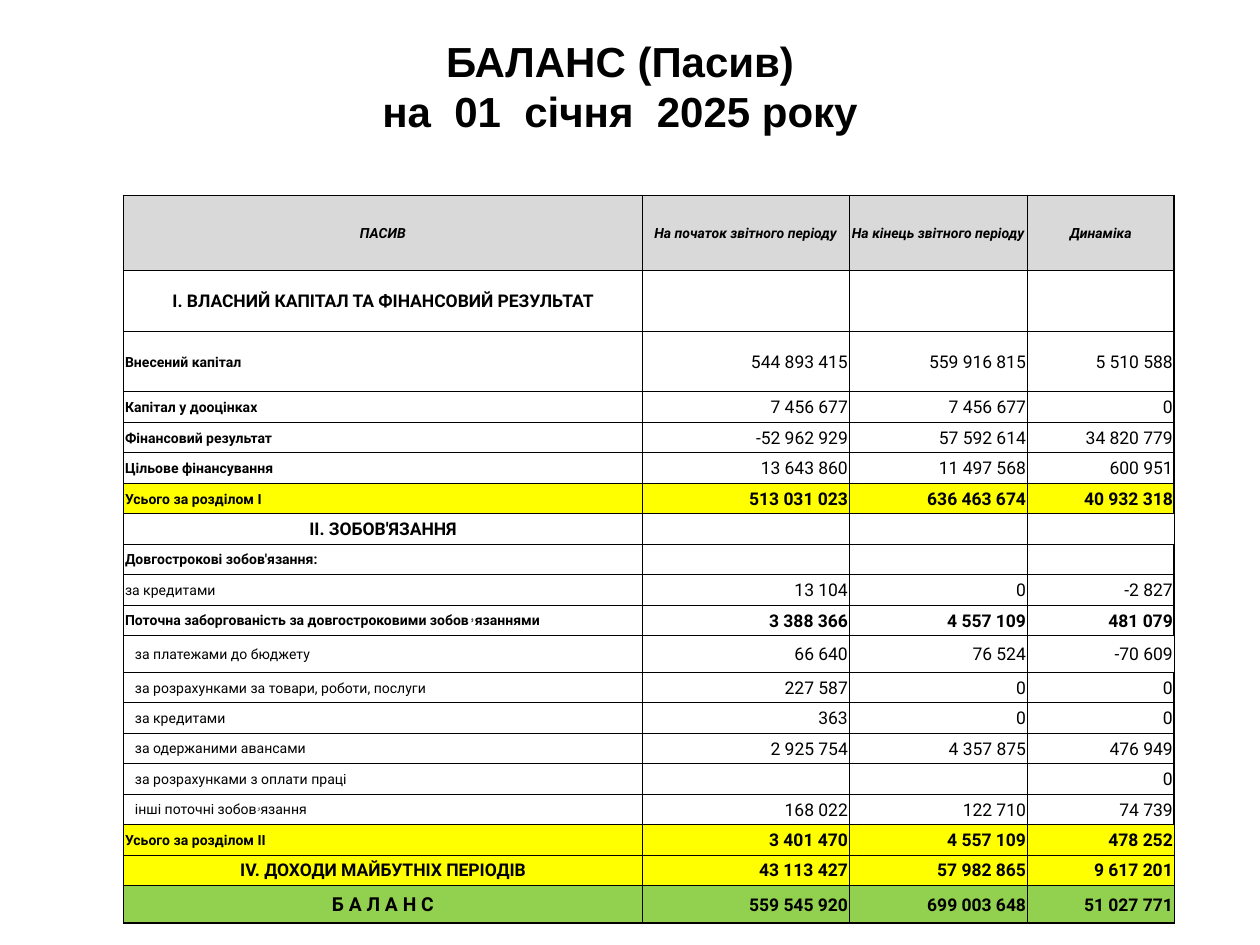
"""Build the balance sheet (liabilities) slide with its table."""
from lxml import etree
from pptx import Presentation, util as u
from pptx.dml.color import RGBColor
from pptx.enum import text as t
from pptx.oxml.ns import qn

HUES = {"ink": "000000", "head": "D9D9D9", "sum": "FFFF00", "end": "92D050"}
LEFT, MID, RIGHT = t.PP_ALIGN.LEFT, t.PP_ALIGN.CENTER, t.PP_ALIGN.RIGHT

KINDS = {
    "head": dict(size=8, bold=True, nums=True, align=MID, hue="head"),
    "part": dict(size=10, bold=True, nums=True, align=MID, hue=None),
    "main": dict(size=8, bold=True, nums=False, align=LEFT, hue=None),
    "debt": dict(size=8, bold=True, nums=True, align=LEFT, hue=None),
    "item": dict(size=8, bold=False, nums=False, align=LEFT, hue=None),
    "sub": dict(size=8, bold=False, nums=False, align=LEFT, hue=None),
    "sum": dict(size=8, bold=True, nums=True, align=LEFT, hue="sum"),
    "gain": dict(size=10, bold=True, nums=True, align=MID, hue="sum"),
    "end": dict(size=11, bold=True, nums=True, align=MID, hue="end"),
}

ROWS = [
    ("head", "ПАСИВ", "На початок звітного періоду", "На кінець звітного періоду", "Динаміка"),
    ("part", "І. ВЛАСНИЙ КАПІТАЛ ТА ФІНАНСОВИЙ РЕЗУЛЬТАТ", "", "", ""),
    ("main", "Внесений капітал", "544 893 415", "559 916 815", "5 510 588"),
    ("main", "Капітал у дооцінках", "7 456 677", "7 456 677", "0"),
    ("main", "Фінансовий результат", "-52 962 929", "57 592 614", "34 820 779"),
    ("main", "Цільове фінансування", "13 643 860", "11 497 568", "600 951"),
    ("sum", "Усього за розділом I", "513 031 023", "636 463 674", "40 932 318"),
    ("part", "ІІ. ЗОБОВ'ЯЗАННЯ", "", "", ""),
    ("main", "Довгострокові зобов'язання:", "", "", ""),
    ("item", "за кредитами", "13 104", "0", "-2 827"),
    ("debt", "Поточна заборгованість за довгостроковими зобовۥязаннями",
     "3 388 366", "4 557 109", "481 079"),
    ("sub", "за платежами до бюджету", "66 640", "76 524", "-70 609"),
    ("sub", "за розрахунками за товари, роботи, послуги", "227 587", "0", "0"),
    ("sub", "за кредитами", "363", "0", "0"),
    ("sub", "за одержаними авансами", "2 925 754", "4 357 875", "476 949"),
    ("sub", "за розрахунками з оплати праці", "", "", "0"),
    ("sub", "інші поточні зобовۥязання", "168 022", "122 710", "74 739"),
    ("sum", "Усього за розділом II", "3 401 470", "4 557 109", "478 252"),
    ("gain", "ІV. ДОХОДИ МАЙБУТНІХ ПЕРІОДІВ", "43 113 427", "57 982 865", "9 617 201"),
    ("end", "Б А Л А Н С", "559 545 920", "699 003 648", "51 027 771"),
]
WIDTHS = [10.46, 4.17, 3.59, 2.96]
TALL = {0: 1.53, 1: 1.22, 2: 1.22, 11: 0.74, 19: 0.76}
HIGH = 14.68
THIN = {7, 11, 17, 18, 19}


def write(par, words, align, form):
    par.alignment = align
    par.text = words
    for run in par.runs:
        for key, val in form.items():
            setattr(run.font, key, val)
        run.font.color.rgb = RGBColor.from_string(HUES["ink"])


def edge(cell, side, pts):
    line = etree.SubElement(cell._tc.get_or_add_tcPr(), qn("a:ln" + side), w=str(u.Pt(pts)))
    fill = etree.SubElement(line, qn("a:solidFill"))
    etree.SubElement(fill, qn("a:srgbClr"), val=HUES["ink"])


deck = Presentation()
deck.slide_width, deck.slide_height = u.Cm(25.4), u.Cm(19.05)
slide = deck.slides.add_slide(deck.slide_layouts[6])

title = slide.shapes.add_textbox(u.Cm(1.3), u.Cm(0.53), u.Cm(22.4), u.Cm(2.39)).text_frame
title.word_wrap = True
title.vertical_anchor = t.MSO_ANCHOR.MIDDLE
write(title.paragraphs[0], "БАЛАНС (Пасив)\vна  01  січня  2025 року", MID,
      dict(name="Arial", size=u.Pt(24), bold=True))

frame = slide.shapes.add_table(len(ROWS), len(WIDTHS), u.Cm(2.49), u.Cm(3.93),
                               u.Cm(sum(WIDTHS)), u.Cm(HIGH))
grid = frame.table
grid.first_row = grid.horz_banding = False
for col, wide in zip(grid.columns, WIDTHS):
    col.width = u.Cm(wide)

base = (HIGH - sum(TALL.values())) / (len(ROWS) - len(TALL))
for r, (kind, *words) in enumerate(ROWS):
    look = KINDS[kind]
    head = kind == "head"
    grid.rows[r].height = u.Cm(TALL.get(r, base))
    for c, word in enumerate(words):
        cell = grid.cell(r, c)
        pad = 0.23 if kind == "sub" and c == 0 else 0.03
        form = dict(margin_left=u.Cm(pad), margin_right=u.Cm(0.03), margin_top=u.Cm(0.03),
                    margin_bottom=0, vertical_anchor=t.MSO_ANCHOR.MIDDLE)
        for key, val in form.items():
            setattr(cell, key, val)
        edge(cell, "L", 1 if c == 0 else 0.5)
        edge(cell, "R", 1 if c == 3 and r not in THIN else 0.5)
        edge(cell, "T", 0.5)
        edge(cell, "B", 1 if kind == "end" else 0.5)
        if look["hue"]:
            cell.fill.solid()
            cell.fill.fore_color.rgb = RGBColor.from_string(HUES[look["hue"]])
        else:
            cell.fill.background()
        par = cell.text_frame.paragraphs[0]
        if not word:
            etree.SubElement(par._p, qn("a:endParaRPr"), sz="1000")
            continue
        label = c == 0 or head
        write(par, word, look["align"] if label else RIGHT,
              dict(name="Roboto", size=u.Pt(look["size"] if label else 10),
                   bold=look["bold"] if label else look["nums"], italic=head))

deck.save("out.pptx")
